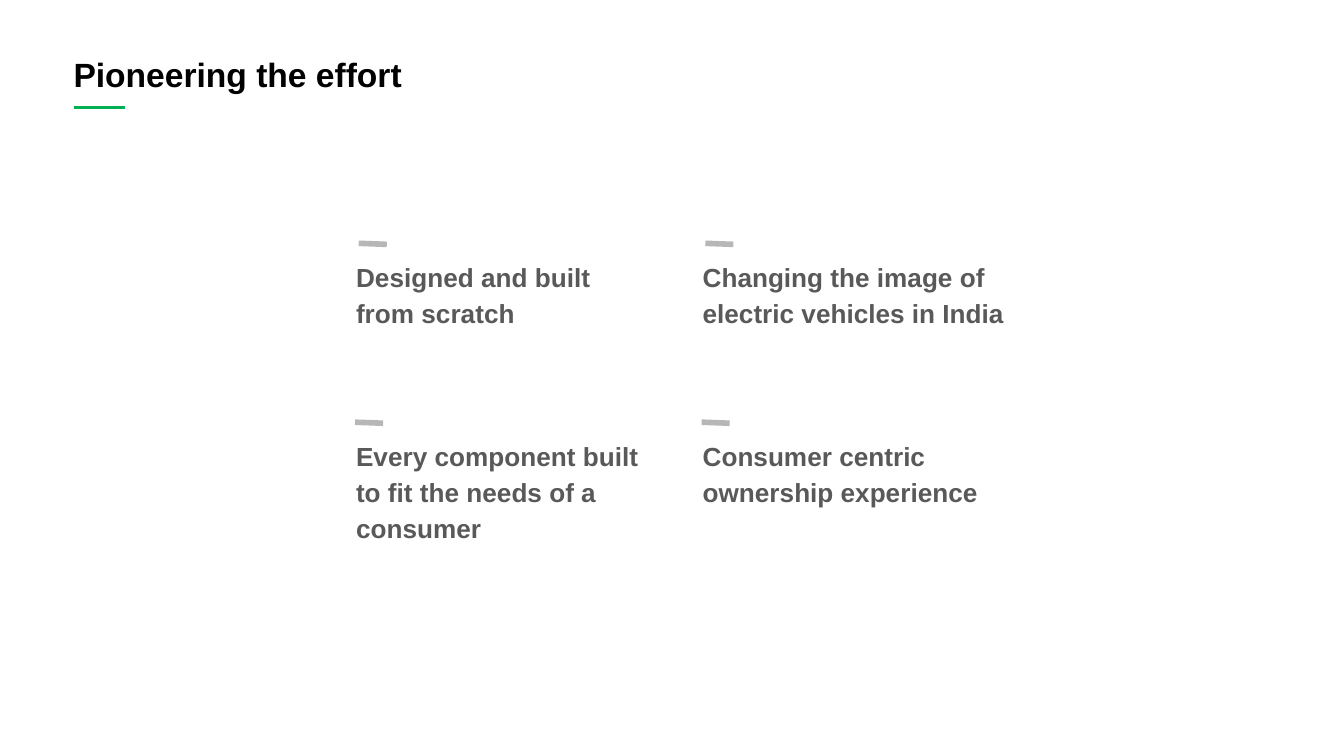
from lxml.etree import SubElement
from pptx import Presentation
from pptx.dml.color import RGBColor
from pptx.enum.shapes import MSO_CONNECTOR
from pptx.enum.text import MSO_ANCHOR, PP_ALIGN
from pptx.oxml.ns import qn
from pptx.util import Cm, Pt

TITLE = "Pioneering the effort"
POINTS = [
    ["Designed and built from scratch",
     "Changing the image of electric vehicles in India"],
    ["Every component built to fit the needs of a consumer",
     "Consumer centric ownership experience"],
]
COLUMNS = [(6.48, 5.94), (13.03, 6.32)]  # left, width in cm
ROWS = [(4.6, 0.3), (7.98, 0.23)]  # top, dash indent in cm
POINT_HEIGHT = 2.16
DASH_LENGTH, DASH_DROP = 0.53, 0.02
INSET = 0.25

BLACK, GREY, SILVER, GREEN = "000000", "595959", "B7B7B7", "00B154"


def color(value):
    return RGBColor.from_string(value)


def add_line(slide, start, end, hex_color, width):
    line = slide.shapes.add_connector(
        MSO_CONNECTOR.STRAIGHT, *(Cm(value) for value in start + end))
    line.line.color.rgb = color(hex_color)
    line.line.width = Pt(width)
    SubElement(line._element.spPr, qn("a:effectLst"))


def write(box, text, size, hex_color, anchor):
    frame = box.text_frame
    frame.text = text
    frame.word_wrap = True
    frame.vertical_anchor = anchor
    frame.margin_left = frame.margin_right = Cm(INSET)
    frame.margin_top = frame.margin_bottom = Cm(INSET)
    para = frame.paragraphs[0]
    para.alignment = PP_ALIGN.LEFT
    para.font.name = "Arial"
    para.font.size = Pt(size)
    para.font.bold = True
    para.font.color.rgb = color(hex_color)
    return para


def add_point(slide, text, left, top, width):
    box = slide.shapes.add_textbox(
        Cm(left), Cm(top), Cm(width), Cm(POINT_HEIGHT))
    para = write(box, text, 14, GREY, MSO_ANCHOR.TOP)
    para.line_spacing = 1.15
    para.space_after = Pt(6)


def main():
    deck = Presentation()
    deck.slide_width, deck.slide_height = Cm(25.4), Cm(14.29)
    slide = deck.slides.add_slide(deck.slide_layouts[5])

    title = slide.shapes.title
    title.left, title.top = Cm(1.14), Cm(0.76)
    title.width, title.height = Cm(23.16), Cm(1.27)
    write(title, TITLE, 18, BLACK, MSO_ANCHOR.BOTTOM)
    add_line(slide, (1.4, 2.03), (2.36, 2.03), GREEN, 1.5)

    for (top, indent), texts in zip(ROWS, POINTS):
        for (left, width), text in zip(COLUMNS, texts):
            start = left + indent
            add_point(slide, text, left, top, width)
            add_line(slide, (start, top),
                     (start + DASH_LENGTH, top + DASH_DROP), SILVER, 3)

    deck.save("out.pptx")


if __name__ == "__main__":
    main()
